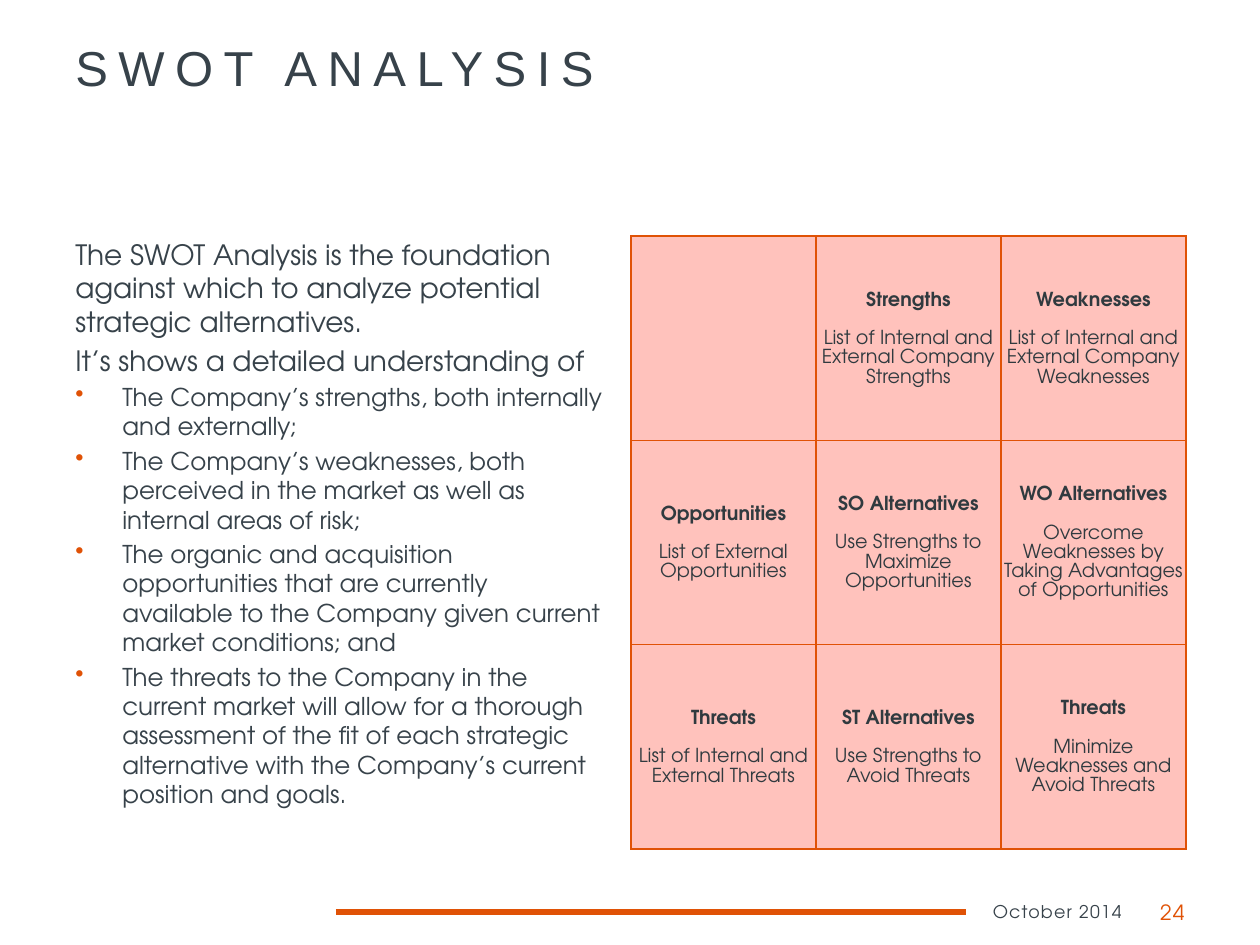
"""Build the SWOT analysis slide with its explanatory text and matrix."""
from dataclasses import dataclass

from lxml import etree
from pptx import Presentation
from pptx.dml.color import RGBColor
from pptx.enum.shapes import MSO_CONNECTOR
from pptx.enum.text import MSO_ANCHOR, PP_ALIGN
from pptx.oxml.ns import qn
from pptx.util import Pt

LEFT, CENTER, RIGHT = PP_ALIGN.LEFT, PP_ALIGN.CENTER, PP_ALIGN.RIGHT
TOP, MIDDLE = MSO_ANCHOR.TOP, MSO_ANCHOR.MIDDLE
STRAIGHT = MSO_CONNECTOR.STRAIGHT

TITLE = "SWOT ANALYSIS"
INTRO = [
    "The SWOT Analysis is the foundation against which to analyze potential strategic alternatives.",
    "It’s shows a detailed understanding of",
]
POINTS = [
    "The Company’s strengths, both internally and externally;",
    "The Company’s weaknesses, both perceived in the market as well as internal areas of risk;",
    "The organic and acquisition opportunities that are currently available to the Company "
    "given current market conditions; and",
    "The threats to the Company in the current market will allow for a thorough assessment "
    "of the fit of each strategic alternative with the Company’s current position and goals.",
]
MATRIX = [
    [
        (),
        ("Strengths", "List of Internal and External Company Strengths"),
        ("Weaknesses", "List of Internal and External Company Weaknesses"),
    ],
    [
        ("Opportunities", "List of External", "Opportunities"),
        ("SO Alternatives", "Use Strengths to Maximize", "Opportunities"),
        ("WO Alternatives", "Overcome Weaknesses by Taking Advantages of Opportunities"),
    ],
    [
        ("Threats", "List of Internal and", "External Threats"),
        ("ST Alternatives", "Use Strengths to Avoid Threats"),
        ("Threats", "Minimize Weaknesses and Avoid Threats"),
    ],
]
DATE, PAGE = "October 2014", "24"


@dataclass(frozen=True)
class Theme:
    heading: str = "Arial"
    body: str = "TeX Gyre Adventor"
    ink: str = "37424A"
    cell_ink: str = "303A3F"
    accent: str = "E05206"
    cell_fill: str = "FFC2BC"
    title_size: int = 28
    intro_size: int = 16
    point_size: int = 14
    page_size: int = 12
    cell_size: int = 11
    date_size: int = 10


THEME = Theme()


def px(length):
    return round(length * 914400 / 126)


def write(frame, text, size, color=THEME.ink, font=THEME.body, bold=False, align=LEFT,
          tracking=0, before=0, after=0, leading=None, bullet=False):
    first = not frame.paragraphs[0].runs
    paragraph = frame.paragraphs[0] if first else frame.add_paragraph()
    paragraph.alignment = align
    paragraph.space_before = Pt(0 if first else before)
    paragraph.space_after = Pt(after)
    if leading:
        paragraph.line_spacing = Pt(leading)
    if bullet:
        properties = paragraph._p.get_or_add_pPr()
        properties.set("marL", str(px(47)))
        properties.set("indent", str(px(-47)))
        bullet_color = etree.SubElement(properties, qn("a:buClr"))
        etree.SubElement(bullet_color, qn("a:srgbClr"), val=THEME.accent)
        etree.SubElement(properties, qn("a:buChar"), char="•")
    run = paragraph.add_run()
    run.text = text
    run.font.name, run.font.size, run.font.bold = font, Pt(size), bold
    run.font.color.rgb = RGBColor.from_string(color)
    if tracking:
        run._r.get_or_add_rPr().set("spc", str(round(tracking * 100)))


def add_frame(slide, left, top, width, height, anchor=TOP):
    frame = slide.shapes.add_textbox(px(left), px(top), px(width), px(height)).text_frame
    frame.word_wrap = True
    frame.vertical_anchor = anchor
    return frame


def outline(cell):
    properties = cell._tc.get_or_add_tcPr()
    for position, side in enumerate(("lnL", "lnR", "lnT", "lnB")):
        border = etree.Element(qn(f"a:{side}"), w=str(Pt(0.75)))
        fill = etree.SubElement(border, qn("a:solidFill"))
        etree.SubElement(fill, qn("a:srgbClr"), val=THEME.accent)
        properties.insert(position, border)


def add_matrix(slide):
    matrix = slide.shapes.add_table(3, 3, px(631), px(236), px(555), px(613)).table
    matrix.first_row = matrix.horz_banding = False
    for row, entries in enumerate(MATRIX):
        for column, entry in enumerate(entries):
            cell = matrix.cell(row, column)
            cell.fill.solid()
            cell.fill.fore_color.rgb = RGBColor.from_string(THEME.cell_fill)
            cell.margin_left = cell.margin_right = cell.margin_top = px(1)
            cell.margin_bottom = 0
            cell.vertical_anchor = MIDDLE
            outline(cell)
            for index, text in enumerate(entry):
                is_heading = index == 0
                write(cell.text_frame, text, THEME.cell_size, THEME.cell_ink, bold=is_heading,
                      align=CENTER, leading=THEME.cell_size,
                      after=THEME.cell_size if is_heading else 0)


def add_footer(slide):
    rule = slide.shapes.add_connector(STRAIGHT, px(336), px(912), px(966), px(912))
    rule.line.color.rgb = RGBColor.from_string(THEME.accent)
    rule.line.width = Pt(3)
    etree.SubElement(rule._element.spPr, qn("a:effectLst"))
    write(add_frame(slide, 840, 887, 294, 50, MIDDLE), DATE, THEME.date_size,
          align=RIGHT, tracking=0.7)
    write(add_frame(slide, 1134, 887, 63, 50, MIDDLE), PAGE, THEME.page_size,
          THEME.accent, align=RIGHT, tracking=0.7)


def main():
    deck = Presentation()
    deck.slide_width, deck.slide_height = px(1260), px(945)
    slide = deck.slides.add_slide(deck.slide_layouts[6])
    write(add_frame(slide, 63, 31, 1134, 168), TITLE, THEME.title_size,
          font=THEME.heading, tracking=6)
    explanation = add_frame(slide, 63, 231, 554, 624)
    for text in INTRO:
        write(explanation, text, THEME.intro_size, before=THEME.intro_size * 0.2)
    for text in POINTS:
        write(explanation, text, THEME.point_size, before=THEME.point_size * 0.2, bullet=True)
    add_matrix(slide)
    add_footer(slide)
    deck.save("out.pptx")


if __name__ == "__main__":
    main()
